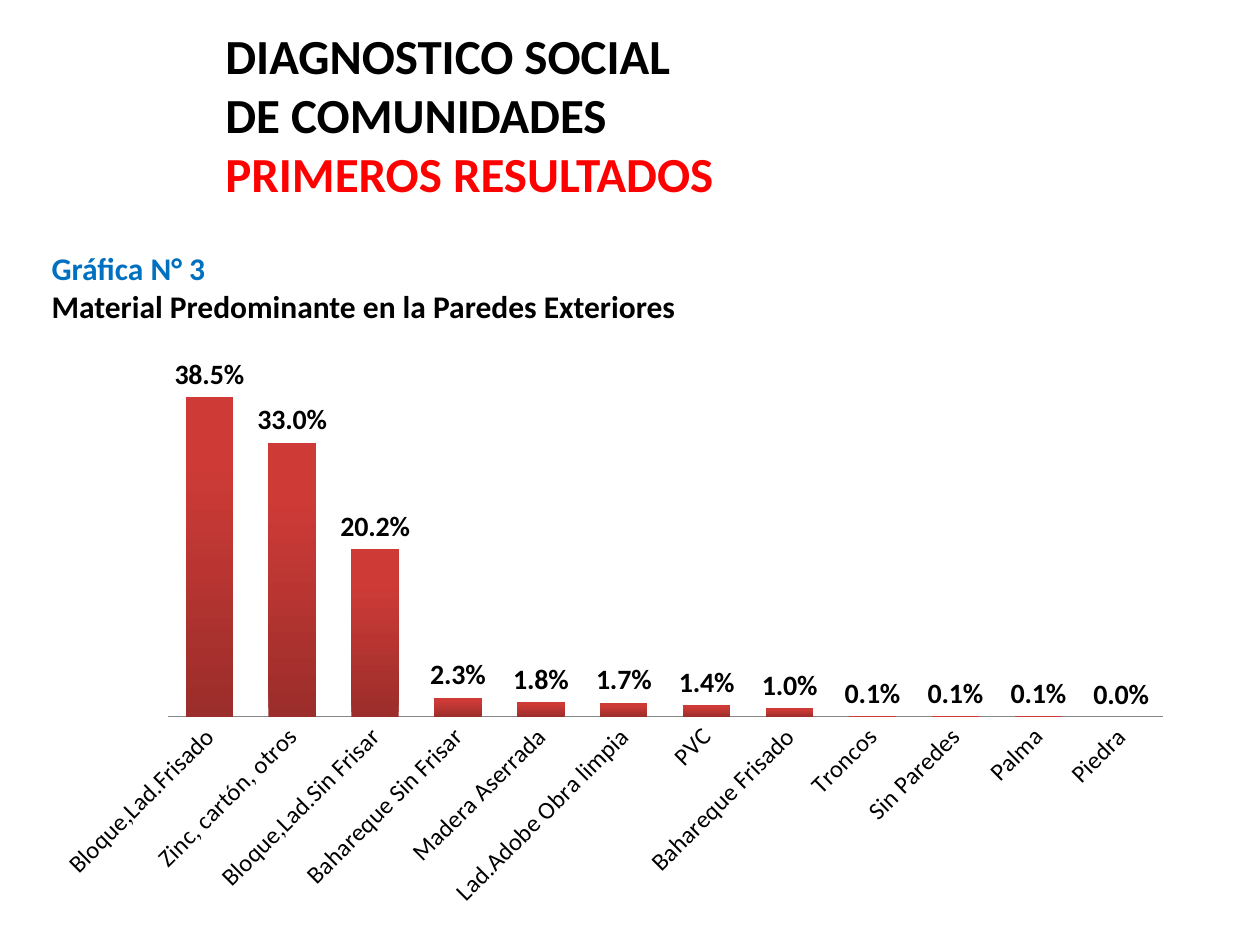
from typing import NamedTuple

from pptx import Presentation
from pptx import util as u
from pptx.chart.data import CategoryChartData
from pptx.dml.color import RGBColor
from pptx.enum import chart as ch, text as tx

FONT = "Calibri"
BLACK, RED, BLUE, GREY = "000000", "FF0000", "0070C0", "868686"


class Line(NamedTuple):
    text: str
    color: str


class Wall(NamedTuple):
    material: str
    share: float


HEADING = [
    Line("DIAGNOSTICO SOCIAL ", BLACK),
    Line("DE COMUNIDADES", BLACK),
    Line("PRIMEROS RESULTADOS", RED),
]
CAPTION = [
    Line("Gráfica N° 3", BLUE),
    Line("Material Predominante en la Paredes Exteriores", BLACK),
]
WALLS = [
    Wall("Bloque,Lad.Frisado", 0.385),
    Wall("Zinc, cartón, otros", 0.33),
    Wall("Bloque,Lad.Sin Frisar", 0.202),
    Wall("Bahareque Sin Frisar", 0.023),
    Wall("Madera Aserrada", 0.018),
    Wall("Lad.Adobe Obra limpia", 0.017),
    Wall("PVC", 0.014),
    Wall("Bahareque Frisado", 0.01),
    Wall("Troncos", 0.001),
    Wall("Sin Paredes", 0.001),
    Wall("Palma", 0.001),
    Wall("Piedra", 0),
]


def rgb(color: str) -> RGBColor:
    return RGBColor.from_string(color)


def apply(target, **values) -> None:
    for name, value in values.items():
        setattr(target, name, value)


def style_font(font, size: float, color: str = BLACK, bold: bool = False) -> None:
    apply(font, name=FONT, size=u.Pt(size), bold=bold)
    font.color.rgb = rgb(color)


def write_line(paragraph, line: Line, size: float) -> None:
    paragraph.alignment = tx.PP_ALIGN.LEFT
    run = paragraph.add_run()
    run.text = line.text
    style_font(run.font, size, line.color, bold=True)


def add_heading(slide) -> None:
    title = slide.shapes.title
    apply(title, left=u.Cm(4.29), top=u.Cm(0.41), width=u.Cm(21.59), height=u.Cm(3.78))
    apply(title.text_frame, word_wrap=True, auto_size=tx.MSO_AUTO_SIZE.NONE,
          vertical_anchor=tx.MSO_ANCHOR.MIDDLE)
    paragraph = title.text_frame.paragraphs[0]
    for i, line in enumerate(HEADING):
        if i:
            paragraph.add_line_break()
        write_line(paragraph, line, 28)


def add_caption(slide) -> None:
    box = slide.shapes.add_textbox(u.Cm(0.79), u.Cm(4.9), u.Cm(15.93), u.Cm(1.8))
    frame = box.text_frame
    apply(frame, word_wrap=True, auto_size=tx.MSO_AUTO_SIZE.SHAPE_TO_FIT_TEXT)
    for i, line in enumerate(CAPTION):
        write_line(frame.add_paragraph() if i else frame.paragraphs[0], line, 18)


def add_wall_chart(slide) -> None:
    data = CategoryChartData(number_format="0.0%")
    data.categories = [wall.material for wall in WALLS]
    data.add_series("Series 1", [wall.share for wall in WALLS])
    chart = slide.shapes.add_chart(
        ch.XL_CHART_TYPE.COLUMN_CLUSTERED,
        u.Cm(0.79), u.Cm(6.68), u.Cm(23.11), u.Cm(11.84), data).chart
    apply(chart, has_legend=False, has_title=False)
    style_font(chart.font, 10)

    # Axes: slanted material names, hidden percentages
    materials, shares = chart.category_axis, chart.value_axis
    apply(materials, major_tick_mark=ch.XL_TICK_MARK.NONE, has_major_gridlines=False)
    materials.format.line.color.rgb = rgb(GREY)
    style_font(materials.tick_labels.font, 14)
    slant = materials._element.txPr.bodyPr
    slant.set("rot", "-2700000")
    slant.set("vert", "horz")
    apply(shares, visible=False, has_major_gridlines=False,
          minimum_scale=0, maximum_scale=0.45)

    # Columns: red gradient, dark at the foot
    plot = chart.plots[0]
    apply(plot, gap_width=75, vary_by_categories=False, has_data_labels=True)
    columns = plot.series[0]
    columns.invert_if_negative = False
    fill = columns.format.fill
    fill.gradient()
    fill.gradient_angle = 90
    for stop, color, position in zip(fill.gradient_stops, ("9B2D2A", "CE3B37"), (0, 0.8)):
        stop.color.rgb = rgb(color)
        stop.position = position

    # Percentages above the columns
    labels = plot.data_labels
    apply(labels, show_value=True, number_format="0.0%", number_format_is_linked=False,
          position=ch.XL_LABEL_POSITION.OUTSIDE_END)
    style_font(labels.font, 16, bold=True)


def main() -> None:
    deck = Presentation()
    apply(deck, slide_width=u.Cm(25.4), slide_height=u.Cm(19.05))
    slide = deck.slides.add_slide(deck.slide_layouts[5])
    add_heading(slide)
    add_caption(slide)
    add_wall_chart(slide)
    deck.save("out.pptx")


if __name__ == "__main__":
    main()
